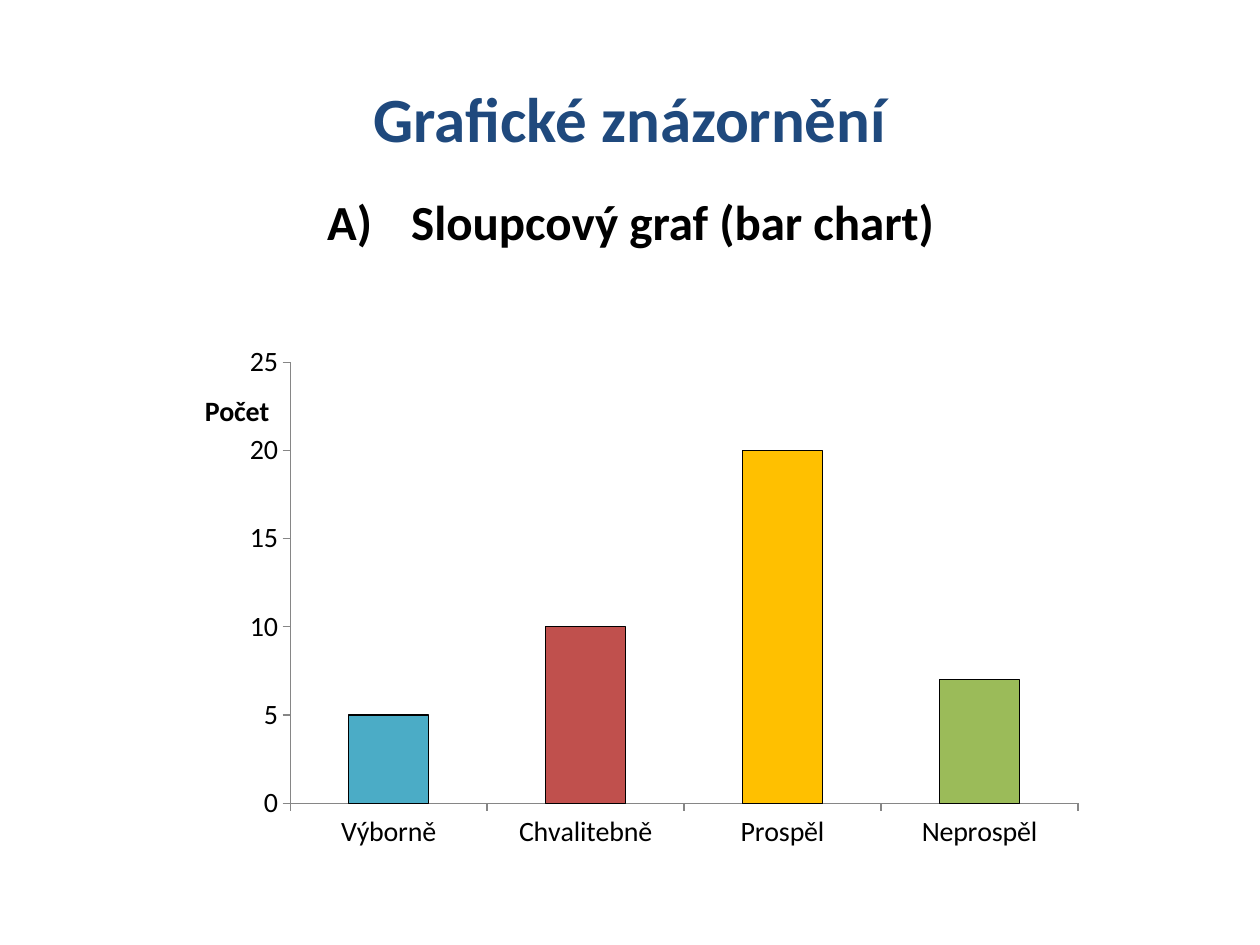
from lxml.etree import SubElement
from pptx import Presentation
from pptx.chart.data import CategoryChartData
from pptx.dml.color import RGBColor
from pptx.enum.chart import XL_CHART_TYPE as ChartType, XL_TICK_MARK as Tick
from pptx.enum.text import MSO_ANCHOR as Anchor, PP_ALIGN as Align
from pptx.oxml import parse_xml
from pptx.oxml.ns import nsdecls, qn
from pptx.util import Pt

PX = 914400 / 126
FONT = "Calibri"
NAVY = RGBColor(0x1F, 0x49, 0x7D)
BLACK = RGBColor(0, 0, 0)
GRAY = RGBColor(0x86, 0x86, 0x86)
PALE = RGBColor(0xB9, 0xCD, 0xE5)
TEAL = RGBColor(0x4B, 0xAC, 0xC6)
RED = RGBColor(0xC0, 0x50, 0x4D)
GOLD = RGBColor(0xFF, 0xC0, 0x00)
GREEN = RGBColor(0x9B, 0xBB, 0x59)


def px(*lengths):
    return [round(n * PX) for n in lengths]


def manual_layout(**values):
    items = "".join(f'<c:{k} val="{v}"/>' for k, v in values.items())
    return parse_xml(f'<c:layout {nsdecls("c")}><c:manualLayout>{items}'
                     '</c:manualLayout></c:layout>')


prs = Presentation()
prs.slide_width, prs.slide_height = px(1260, 945)
s = prs.slides.add_slide(prs.slide_layouts[1])

# Title and lettered heading
title, body = s.placeholders
texts = [
    (title, "Grafické znázornění", (63, 38, 1134, 158), 36, NAVY),
    (body, "Sloupcový graf (bar chart)", (95, 185, 1071, 655), 28, BLACK),
]
for sp, text, box, size, color in texts:
    sp.left, sp.top, sp.width, sp.height = px(*box)
    p = sp.text_frame.paragraphs[0]
    p.alignment = Align.CENTER
    r = p.add_run()
    r.text = text
    for name, value in {"name": FONT, "size": Pt(size), "bold": True}.items():
        setattr(r.font, name, value)
    r.font.color.rgb = color
title.text_frame.vertical_anchor = Anchor.MIDDLE

pPr = body.text_frame.paragraphs[0]._p.get_or_add_pPr()
indent = px(84)[0]
pPr.set("marL", str(indent))
pPr.set("indent", str(-indent))
SubElement(pPr, qn("a:buFont"), typeface="+mj-lt")
SubElement(pPr, qn("a:buAutoNum"), type="alphaUcParenR")

# Column chart
data = CategoryChartData()
data.categories = ["Výborně", "Chvalitebně", "Prospěl", "Neprospěl"]
data.add_series("Series 1", [5, 10, 20, 7])
chart = s.shapes.add_chart(ChartType.COLUMN_CLUSTERED,
                           *px(84, 304, 1052, 641), data).chart
chart.has_legend = chart.has_title = False
chart.font.name = FONT
chart.font.size = Pt(16)
chart.font.color.rgb = BLACK

plot = chart.plots[0]
plot.gap_width = 147
plot.vary_by_categories = False
series = plot.series[0]
series.format.fill.solid()
series.format.fill.fore_color.rgb = PALE
for part, colors in [(series, [None])] + [
        (series.points[i], [c]) for i, c in enumerate([TEAL, RED, GOLD, GREEN])]:
    if colors[0] is not None:
        part.format.fill.solid()
        part.format.fill.fore_color.rgb = colors[0]
    part.format.line.color.rgb = BLACK
    part.format.line.width = Pt(0.75)

# Axes
for axis in (chart.category_axis, chart.value_axis):
    for name, value in {"has_major_gridlines": False, "major_tick_mark": Tick.OUTSIDE,
                        "minor_tick_mark": Tick.NONE}.items():
        setattr(axis, name, value)
    axis.format.line.color.rgb = GRAY
    axis.format.line.width = Pt(0.75)
scale = chart.value_axis
for name, value in {"minimum_scale": 0, "maximum_scale": 25, "major_unit": 5}.items():
    setattr(scale, name, value)

# Horizontal value axis title
tf = scale.axis_title.text_frame
tf.text = "Počet"
font = tf.paragraphs[0].runs[0].font
for name, value in {"name": FONT, "size": Pt(16), "bold": True}.items():
    setattr(font, name, value)
font.color.rgb = BLACK
label = scale.axis_title._element
bodyPr = label.find(".//" + qn("a:bodyPr"))
bodyPr.set("rot", "0")
bodyPr.set("vert", "horz")

# Fixed places of the axis title and the plot area
area = chart._chartSpace.find(".//" + qn("c:plotArea"))
for parent in (label, area):
    for old in parent.findall(qn("c:layout")):
        parent.remove(old)
label.find(qn("c:tx")).addnext(
    manual_layout(xMode="edge", yMode="edge", x=0.11, y=0.13))
area.insert(0, manual_layout(layoutTarget="inner", xMode="edge", yMode="edge",
                             x=0.196, y=0.091, w=0.749, h=0.688))

prs.save("out.pptx")
